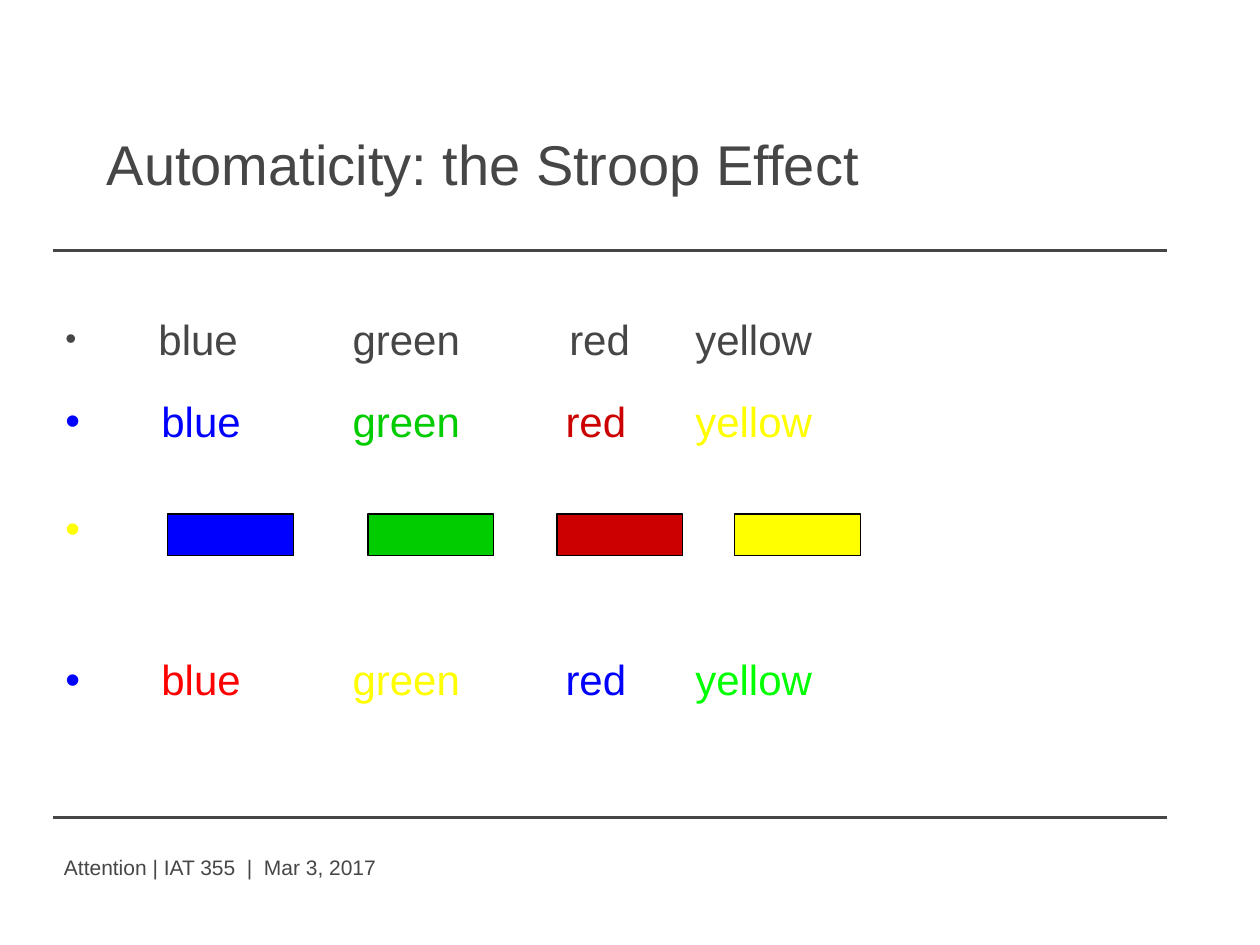
from lxml import etree
from pptx import Presentation
from pptx import util as u
from pptx.dml.color import RGBColor
from pptx.enum import shapes, text
from pptx.oxml.ns import qn

GREY, BLUE, GREEN, RED, YELLOW = "464646", "0000FF", "00CC00", "CC0000", "FFFF00"
LEFT, WIDTH = 0.42, 8.84


def color(hex_value):
    return RGBColor.from_string(hex_value)


def text_frame(left, top, width, height, **settings):
    box = slide.shapes.add_textbox(*map(u.Inches, (left, top, width, height)))
    for key, value in dict(word_wrap=True, **settings).items():
        setattr(box.text_frame, key, value)
    return box.text_frame


deck = Presentation()
deck.slide_width, deck.slide_height = u.Inches(10), u.Inches(7.5)
slide = deck.slides.add_slide(deck.slide_layouts[6])

# Rules above and below the body
for rule_y in (1.99, 6.49):
    rule = slide.shapes.add_connector(
        shapes.MSO_CONNECTOR.STRAIGHT,
        *map(u.Inches, (LEFT, rule_y, LEFT + WIDTH, rule_y)))
    rule.line.color.rgb = color(GREY)
    rule.line.width = u.Pt(1.5)
    etree.SubElement(rule._element.spPr, qn("a:effectLst"))

# Footer and title
for words, size, area in (
        ("Attention | IAT 355  |  Mar 3, 2017", 12, (0.41, 6.63, 5.9, 0.5)),
        ("Automaticity: the Stroop Effect", 32, (0.75, 0.67, 8.83, 1.25))):
    line = text_frame(*area, vertical_anchor=text.MSO_ANCHOR.MIDDLE).paragraphs[0]
    line.text = words
    for key, value in dict(name="Arial", size=u.Pt(size)).items():
        setattr(line.font, key, value)
    line.font.color.rgb = color(GREY)

# Stroop rows: space before, bullet colour, lead size, tab of "red", word colours
words = ("blue", "green", "red", "yellow")
stroop_rows = (
    (0, GREY, 18, 4, (GREY,) * 4),
    (21, BLUE, 24, 3.97, (BLUE, GREEN, RED, YELLOW)),
    (36, YELLOW, 24, 3.97, ()),
    (60, BLUE, 24, 3.97, ("FF0000", YELLOW, BLUE, "00FF00")),
)
body = text_frame(LEFT, 2.08, WIDTH, 4.33, margin_top=u.Inches(0.45))
for number, (space, bullet, lead_size, red_tab, word_colors) in enumerate(stroop_rows):
    row = body.paragraphs[0] if number == 0 else body.add_paragraph()
    row.line_spacing = 0.9
    row.space_before = u.Pt(space)
    props = row._p.get_or_add_pPr()
    props.set("marL", str(u.Inches(0.67)))
    props.set("indent", str(-u.Inches(0.67)))
    bullet_color = etree.SubElement(props, qn("a:buClr"))
    etree.SubElement(bullet_color, qn("a:srgbClr"), val=bullet)
    etree.SubElement(props, qn("a:buFont"), typeface="Arial")
    etree.SubElement(props, qn("a:buChar"), char="•")
    tabs = etree.SubElement(props, qn("a:tabLst"))
    for stop in (2.28, red_tab, 5):
        etree.SubElement(tabs, qn("a:tab"), pos=str(u.Inches(stop)), algn="l")

    pieces = [(" ", lead_size, bullet)]
    for column, (word, word_color) in enumerate(zip(words, word_colors)):
        pieces.append(("\t" * (column > 0) + word, 24, word_color))
    for piece, size, piece_color in pieces:
        run = row.add_run()
        run.text = piece
        for key, value in dict(name="Arial", size=u.Pt(size)).items():
            setattr(run.font, key, value)
        run.font.color.rgb = color(piece_color)

# Colour swatches in the third row
swatches = slide.shapes.add_group_shape()
for swatch_x, swatch_color in zip((1.33, 2.92, 4.42, 5.83), (BLUE, GREEN, RED, YELLOW)):
    swatch = swatches.shapes.add_shape(
        shapes.MSO_SHAPE.RECTANGLE, *map(u.Inches, (swatch_x, 4.08, 1, 0.33)))
    swatch.shadow.inherit = False
    swatch.fill.solid()
    swatch.fill.fore_color.rgb = color(swatch_color)
    swatch.line.color.rgb = color("000000")
    swatch.line.width = u.Pt(0.75)

deck.save("out.pptx")
